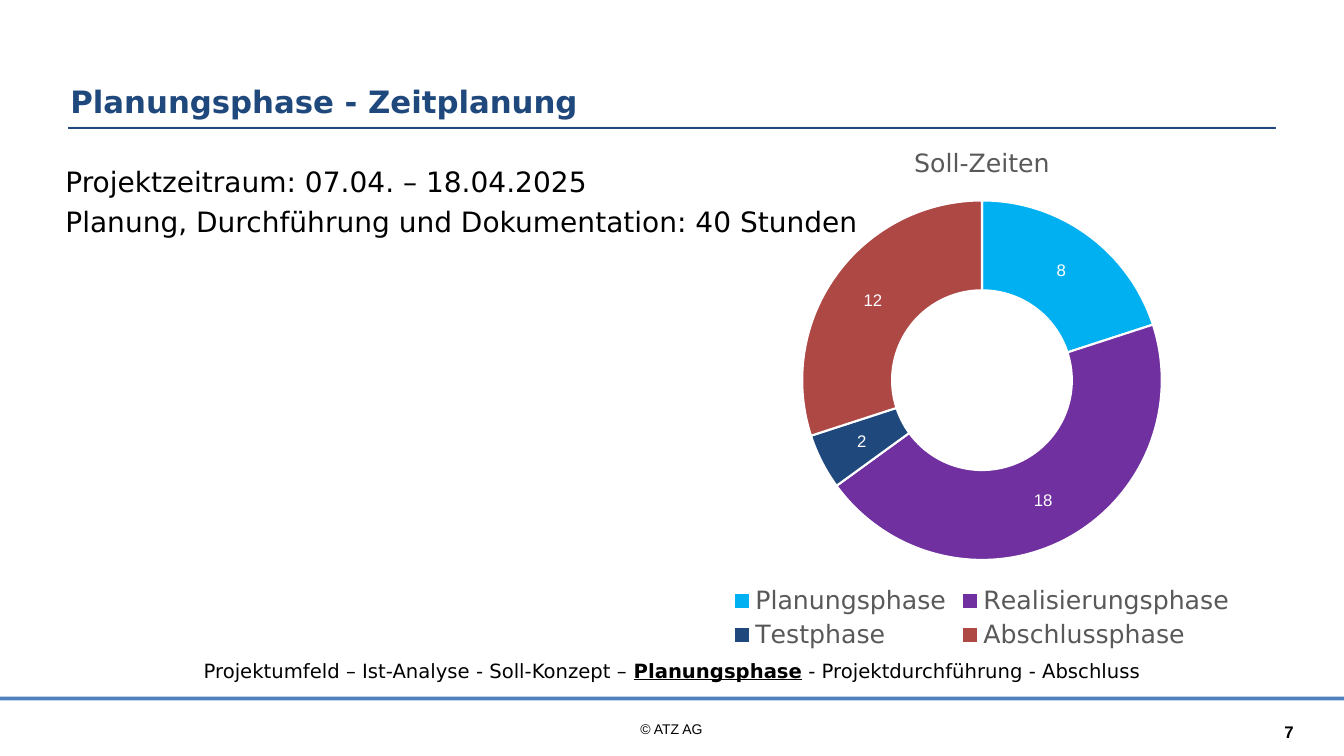
from dataclasses import dataclass
from lxml.etree import SubElement
from pptx import Presentation
from pptx.chart.data import CategoryChartData
from pptx.dml.color import RGBColor
from pptx.enum.chart import XL_CHART_TYPE, XL_LEGEND_POSITION
from pptx.enum.shapes import MSO_SHAPE
from pptx.enum.text import MSO_ANCHOR, PP_ALIGN
from pptx.oxml.ns import qn
from pptx.util import Inches, Pt


@dataclass(frozen=True)
class Theme:
    head: str = "DejaVu Sans"
    body: str = "Arial"
    navy: str = "1F497D"
    blue: str = "4F81BD"
    silver: str = "C0C0C0"
    grey: str = "595959"
    black: str = "000000"
    white: str = "FFFFFF"


T = Theme()
WIDTH, HEIGHT = 13.33, 7.5

# Type styles
TITLE = dict(name=T.head, size=22, color=T.navy, bold=True)
BODY = dict(name=T.head, size=20, color=T.black)
STEP = dict(name=T.head, size=14, color=T.black)
CURRENT = dict(STEP, bold=True, underline=True)
FOOTER = dict(name=T.body, size=10, color=T.black)
NUMBER = dict(name=T.body, size=12, color=T.black, bold=True)
CHART_TEXT = dict(name=T.head, size=18, color=T.grey, bold=False)
VALUE = dict(name=T.body, size=12, color=T.white)

# Content; every area is left, top, width, height in percent of the slide
BARS = [
    ((5.1, 16.8, 89.8, 0.15), T.silver, T.navy),
    ((0, 92.13, 100, 0.53), T.blue, None),
]
FACTS = [
    ("Projektzeitraum: 07.04. – 18.04.2025", 41.94),
    ("Planung, Durchführung und Dokumentation: 40 Stunden", 61.52),
]
FACT_LEFT, FACT_TOP, FACT_PITCH, FACT_HEIGHT = 4.13, 21.07, 5.33, 5.87
STEPS = [
    ("Projektumfeld – Ist-Analyse - Soll-Konzept – ", STEP),
    ("Planungsphase", CURRENT),
    (" - Projektdurchführung - Abschluss", STEP),
]
CHART_AREA = (38.78, 16.67, 68.57, 70)
CHART_TITLE = "Soll-Zeiten"
PHASES = [
    ("Planungsphase", 8, "00B0F0"),
    ("Realisierungsphase", 18, "7030A0"),
    ("Testphase", 2, T.navy),
    ("Abschlussphase", 12, "AE4845"),
]


def place(area):
    return [Inches(side * share / 100)
            for side, share in zip((WIDTH, HEIGHT) * 2, area)]


def style(font, look):
    for key, value in look.items():
        if key == "color":
            font.color.rgb = RGBColor.from_string(value)
        else:
            setattr(font, key, Pt(value) if key == "size" else value)


def paint(fill, color):
    fill.solid()
    fill.fore_color.rgb = RGBColor.from_string(color)


def add_text(s, area, runs, align=PP_ALIGN.LEFT, anchor=MSO_ANCHOR.TOP, wrap=True):
    tf = s.shapes.add_textbox(*place(area)).text_frame
    tf.word_wrap = wrap
    tf.vertical_anchor = anchor
    p = tf.paragraphs[0]
    p.alignment = align
    for text, look in runs:
        r = p.add_run()
        r.text = text
        style(r.font, look)
    return p


def add_bar(s, area, color, outline):
    sp = s.shapes.add_shape(MSO_SHAPE.RECTANGLE, *place(area))
    sp.shadow.inherit = False
    paint(sp.fill, color)
    if outline:
        sp.line.color.rgb = RGBColor.from_string(outline)
        sp.line.width = Pt(0.25)
    else:
        sp.line.fill.background()


def add_phase_chart(s):
    data = CategoryChartData()
    data.categories = [name for name, _, _ in PHASES]
    data.add_series("Soll-Zeiten", [hours for _, hours, _ in PHASES])
    chart = s.shapes.add_chart(
        XL_CHART_TYPE.DOUGHNUT, *place(CHART_AREA), data).chart
    style(chart.font, FOOTER)

    # Title and legend
    chart.has_title = True
    tf = chart.chart_title.text_frame
    tf.text = CHART_TITLE
    style(tf.paragraphs[0].runs[0].font, CHART_TEXT)
    chart.has_legend = True
    chart.legend.position = XL_LEGEND_POSITION.BOTTOM
    chart.legend.include_in_layout = False
    style(chart.legend.font, CHART_TEXT)

    # Ring segments and their values
    plot = chart.plots[0]
    plot.vary_by_categories = True
    series = plot.series[0]
    for i, (_, _, color) in enumerate(PHASES):
        segment = series.points[i].format
        paint(segment.fill, color)
        segment.line.color.rgb = RGBColor.from_string(T.white)
        segment.line.width = Pt(1.5)
    labels = series.data_labels
    labels.show_value = True
    labels.show_percentage = False
    style(labels.font, VALUE)


def main():
    prs = Presentation()
    prs.slide_width, prs.slide_height = Inches(WIDTH), Inches(HEIGHT)
    s = prs.slides.add_slide(prs.slide_layouts[6])

    # Frame: rules, footer and heading
    for bar in BARS:
        add_bar(s, *bar)
    add_text(s, (36.23, 93.73, 27.46, 5.33), [("© ATZ AG", FOOTER)],
             PP_ALIGN.CENTER, MSO_ANCHOR.MIDDLE)
    p = add_text(s, (4.5, 7.2, 72.17, 12.53),
                 [("Planungsphase - Zeitplanung", TITLE)], anchor=MSO_ANCHOR.MIDDLE)
    p.line_spacing = Pt(26)

    # Schedule
    add_phase_chart(s)
    for row, (fact, width) in enumerate(FACTS):
        area = (FACT_LEFT, FACT_TOP + row * FACT_PITCH, width, FACT_HEIGHT)
        add_text(s, area, [(fact, BODY)], wrap=False)

    # Slide number as a live field, and progress line
    p = add_text(s, (91.15, 94.13, 5.85, 5.2), [("7", NUMBER)],
                 PP_ALIGN.RIGHT, MSO_ANCHOR.MIDDLE)
    add_text(s, (6.15, 86.53, 87.7, 4.53), STEPS, PP_ALIGN.CENTER)

    prs.save("out.pptx")


if __name__ == "__main__":
    main()
